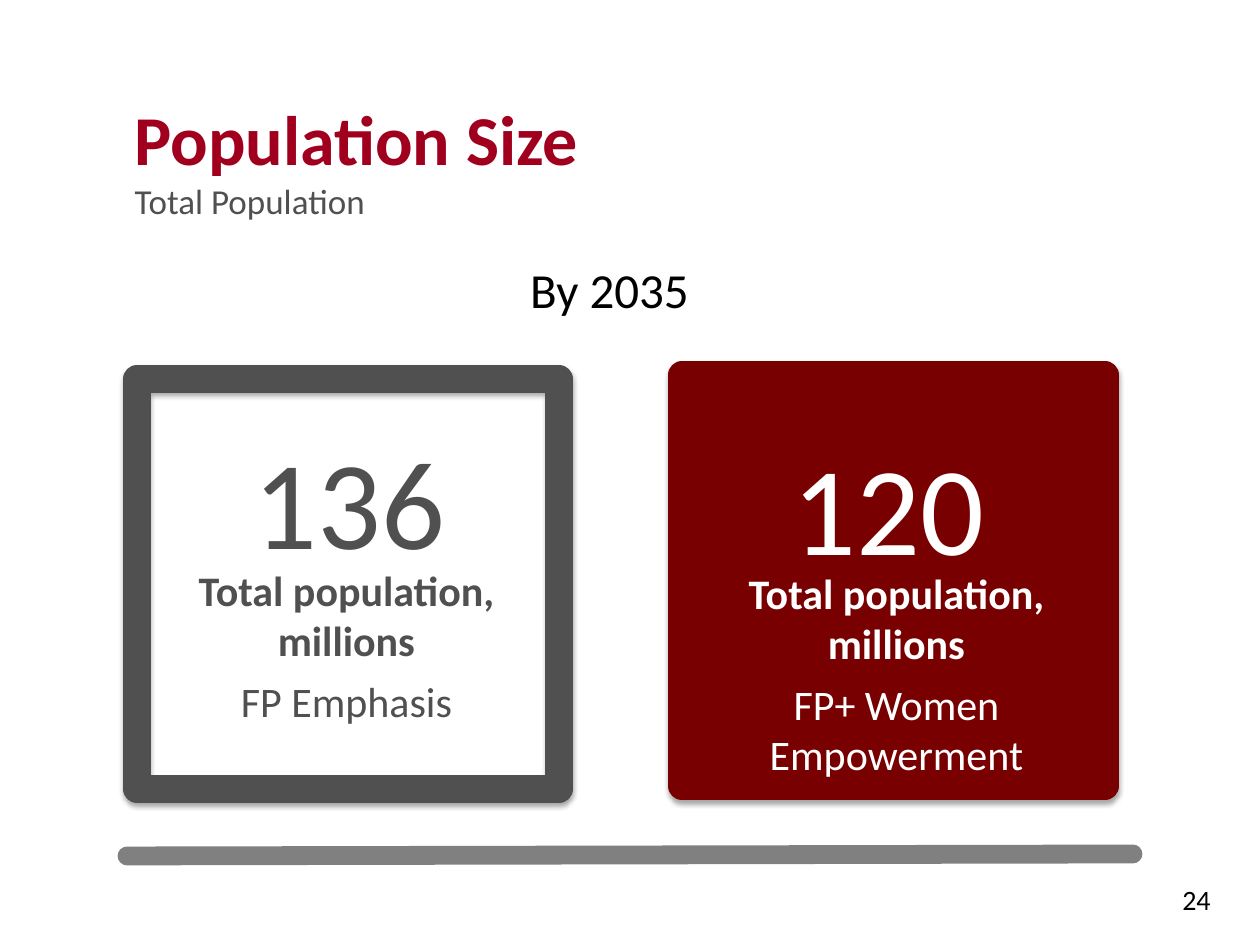
from dataclasses import dataclass

from lxml import etree
from pptx import Presentation
from pptx.dml.color import RGBColor
from pptx.enum.shapes import MSO_CONNECTOR, MSO_SHAPE
from pptx.enum.text import MSO_ANCHOR, MSO_AUTO_SIZE, PP_ALIGN
from pptx.oxml.ns import qn
from pptx.util import Pt

LEFT, CENTER, RIGHT = PP_ALIGN.LEFT, PP_ALIGN.CENTER, PP_ALIGN.RIGHT
BOTTOM = MSO_ANCHOR.BOTTOM
NO_AUTOFIT = MSO_AUTO_SIZE.NONE
RECTANGLE = MSO_SHAPE.RECTANGLE
STRAIGHT = MSO_CONNECTOR.STRAIGHT
EMU_PER_PX = 914400 / 126
TITLE_ONLY = 5


@dataclass(frozen=True)
class Theme:
    font: str = "Calibri"
    red: str = "A0001E"
    maroon: str = "780000"
    gray: str = "505050"
    rule: str = "808080"
    black: str = "000000"
    white: str = "FFFFFF"
    title: int = 40
    subtitle: int = 20
    heading: int = 28
    figure: int = 72
    label: int = 24
    number: int = 16
    border: float = 16
    rule_width: float = 10.75


THEME = Theme()


def px(n):
    return round(n * EMU_PER_PX)


def rgb(color):
    return RGBColor.from_string(color)


def add_run(p, text, size, color, bold=False):
    r = p.add_run()
    r.text = text
    r.font.name = THEME.font
    r.font.size = Pt(size)
    r.font.bold = bold
    r.font.color.rgb = rgb(color)


def add_text(slide, box, lines, size, color, align=CENTER, space_after=0):
    """Add a text box with one paragraph for each (text, bold) pair."""
    tf = slide.shapes.add_textbox(*map(px, box)).text_frame
    tf.word_wrap = True
    for i, (text, bold) in enumerate(lines):
        p = tf.add_paragraph() if i else tf.paragraphs[0]
        p.alignment = align
        p.space_after = Pt(space_after)
        add_run(p, text, size, color, bold)


def add_title(slide, title, subtitle):
    sp = slide.shapes.title
    sp.left, sp.top, sp.width, sp.height = map(px, (122, 111, 1016, 156))
    tf = sp.text_frame
    tf.auto_size = NO_AUTOFIT
    tf.vertical_anchor = BOTTOM
    tf.margin_bottom = px(45)
    p = tf.paragraphs[0]
    p.alignment = LEFT
    add_run(p, title, THEME.title, THEME.red, True)
    p.add_line_break()
    add_run(p, subtitle, THEME.subtitle, THEME.gray)


def add_shadow(sp):
    sp.shadow.inherit = False
    effects = sp._element.spPr.find(qn("a:effectLst"))
    shadow = etree.SubElement(effects, qn("a:outerShdw"), blurRad=str(Pt(3.1)),
                              dist=str(Pt(1.8)), dir="5400000", rotWithShape="0")
    color = etree.SubElement(shadow, qn("a:srgbClr"), val=THEME.black)
    etree.SubElement(color, qn("a:alpha"), val="35000")


def add_frame(slide, box, color, filled):
    sp = slide.shapes.add_shape(RECTANGLE, *map(px, box))
    if filled:
        sp.fill.solid()
        sp.fill.fore_color.rgb = rgb(color)
    else:
        sp.fill.background()
    sp.line.color.rgb = rgb(color)
    sp.line.width = Pt(THEME.border)
    etree.SubElement(sp.line._ln, qn("a:round"))
    add_shadow(sp)


def add_card(slide, frame, label_box, figure_box, figure, scenario, color, filled):
    text_color = THEME.white if filled else color
    add_frame(slide, frame, color, filled)
    add_text(slide, label_box,
             [("Total population, millions", True), (scenario, False)],
             THEME.label, text_color, space_after=6)
    add_text(slide, figure_box, [(figure, False)], THEME.figure, text_color)


def add_rule(slide, start, end):
    line = slide.shapes.add_connector(STRAIGHT, *map(px, start + end))
    line.line.color.rgb = rgb(THEME.rule)
    line.line.width = Pt(THEME.rule_width)
    line.line._ln.set("cap", "rnd")
    etree.SubElement(line._element.spPr, qn("a:effectLst"))


def main():
    prs = Presentation()
    prs.slide_width, prs.slide_height = px(1260), px(945)
    slide = prs.slides.add_slide(prs.slide_layouts[TITLE_ONLY])

    add_title(slide, "Population Size", "Total Population")
    add_text(slide, (326, 253, 567, 72), [("By 2035", False)],
             THEME.heading, THEME.black)
    add_rule(slide, (127, 856), (1133, 854))
    add_card(slide, (137, 379, 422, 410), (156, 558, 381, 224),
             (168, 417, 363, 318), "136", "FP Emphasis", THEME.gray, False)
    add_card(slide, (682, 375, 423, 411), (706, 561, 381, 338),
             (711, 423, 355, 318), "120", "FP+ Women Empowerment",
             THEME.maroon, True)
    add_text(slide, (1077, 876, 146, 34), [("24", False)],
             THEME.number, THEME.black, RIGHT)

    prs.save("out.pptx")


if __name__ == "__main__":
    main()
